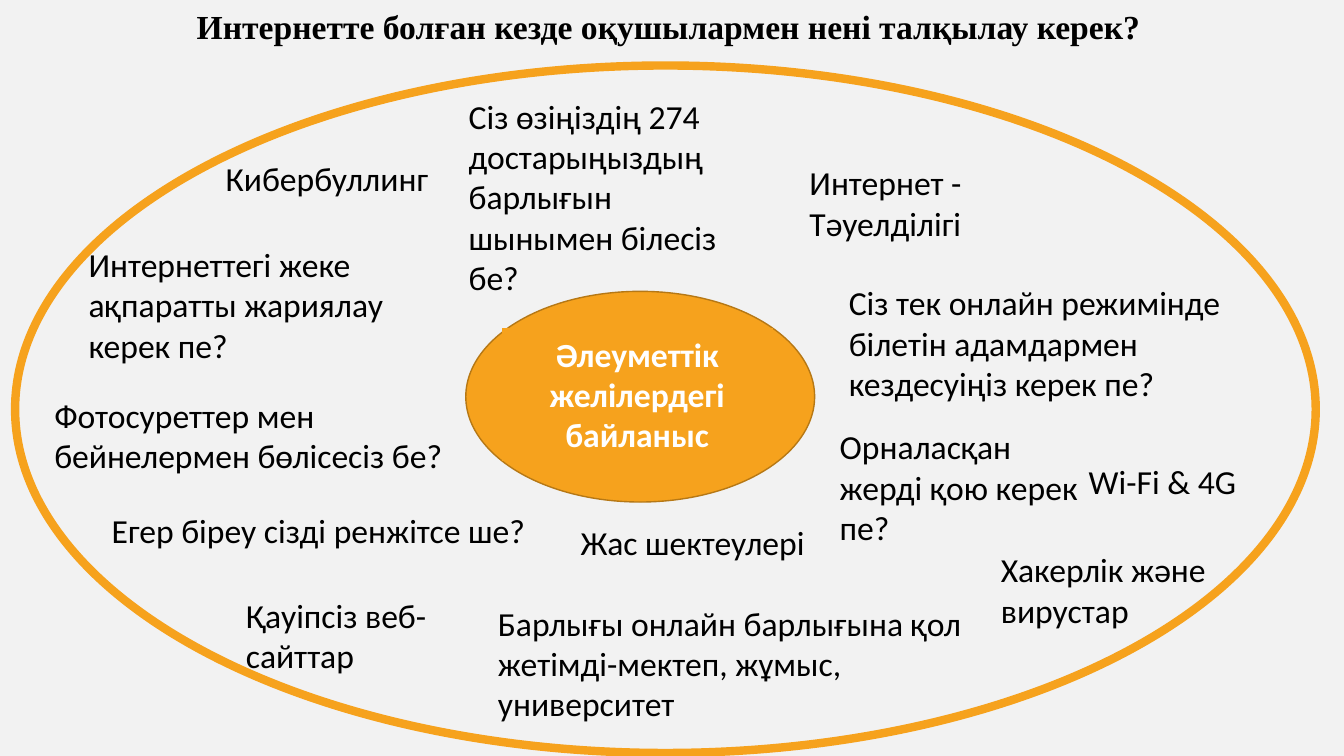
from pptx import Presentation
from pptx.dml.color import RGBColor
from pptx.enum import shapes, text
from pptx.util import Pt

PX = 9144
ORANGE = RGBColor(0xF6, 0xA2, 0x1D)
BROWN = RGBColor(0xB6, 0x78, 0x15)
PALE = RGBColor(0xF2, 0xF2, 0xF2)
BLACK = RGBColor(0, 0, 0)
WHITE = RGBColor(255, 255, 255)
OVAL = shapes.MSO_SHAPE.OVAL
RECTANGLE = shapes.MSO_SHAPE.RECTANGLE

deck = Presentation()
deck.slide_width, deck.slide_height = 1333 * PX, 750 * PX
slide = deck.slides.add_slide(deck.slide_layouts[6])
slide.background.fill.solid()
slide.background.fill.fore_color.rgb = PALE


def add_figure(kind, box, fill, line, width):
    figure = slide.shapes.add_shape(kind, *(n * PX for n in box))
    figure.shadow.inherit = False
    if fill is None:
        figure.fill.background()
    else:
        figure.fill.solid()
        figure.fill.fore_color.rgb = fill
    figure.line.color.rgb = line
    figure.line.width = Pt(width)
    return figure


def write(holder, words, face="Calibri", color=BLACK, bold=False, align=text.PP_ALIGN.LEFT):
    frame = holder.text_frame
    frame.word_wrap = True
    frame.auto_size = text.MSO_AUTO_SIZE.SHAPE_TO_FIT_TEXT
    frame.vertical_anchor = text.MSO_ANCHOR.TOP
    paragraph = frame.paragraphs[0]
    paragraph.alignment = align
    run = paragraph.add_run()
    run.text = words
    for key, value in {"name": face, "size": Pt(24), "bold": bold}.items():
        setattr(run.font, key, value)
    run.font.color.rgb = color


add_figure(OVAL, (15, 65, 1290, 682), None, ORANGE, 6)
add_figure(OVAL, (462, 289, 346, 209), ORANGE, BROWN, 1)
theme = add_figure(RECTANGLE, (498, 326, 268, 131), ORANGE, ORANGE, 0.75)
write(theme, "Әлеуметтік желілердегі байланыс", color=WHITE, bold=True, align=text.PP_ALIGN.CENTER)

title = slide.shapes.add_textbox(104 * PX, 1 * PX, 1118 * PX, 50 * PX)
write(title, "Интернетте болған кезде оқушылармен нені талқылау керек?",
      face="Times New Roman", bold=True, align=text.PP_ALIGN.CENTER)

topics = [
    (832, 275, 433, 131, "Сіз тек онлайн режимінде білетін адамдармен кездесуіңіз керек пе?"),
    (101, 501, 450, 50, "Егер біреу сізді ренжітсе ше?"),
    (455, 90, 310, 172, "Сіз өзіңіздің 274 достарыңыздың барлығын шынымен білесіз бе?"),
    (566, 513, 260, 50, "Жас шектеулері"),
    (44, 387, 420, 91, "Фотосуреттер мен бейнелермен бөлісесіз бе?"),
    (484, 593, 527, 131, "Барлығы онлайн барлығына қол жетімді-мектеп, жұмыс, университет"),
    (78, 237, 400, 131, "Интернеттегі жеке ақпаратты жариялау керек пе?"),
    (823, 418, 260, 131, "Орналасқан жерді қою керек пе?"),
    (983, 540, 260, 91, "Хакерлік және вирустар"),
    (234, 585, 293, 91, "Қауіпсіз веб-сайттар"),
    (214, 152, 293, 50, "Кибербуллинг"),
    (793, 156, 218, 91, "Интернет - Тәуелділігі"),
    (1070, 452, 244, 50, "Wi-Fi & 4G"),
]
for *box, words in topics:
    write(slide.shapes.add_textbox(*(n * PX for n in box)), words)

deck.save("out.pptx")
